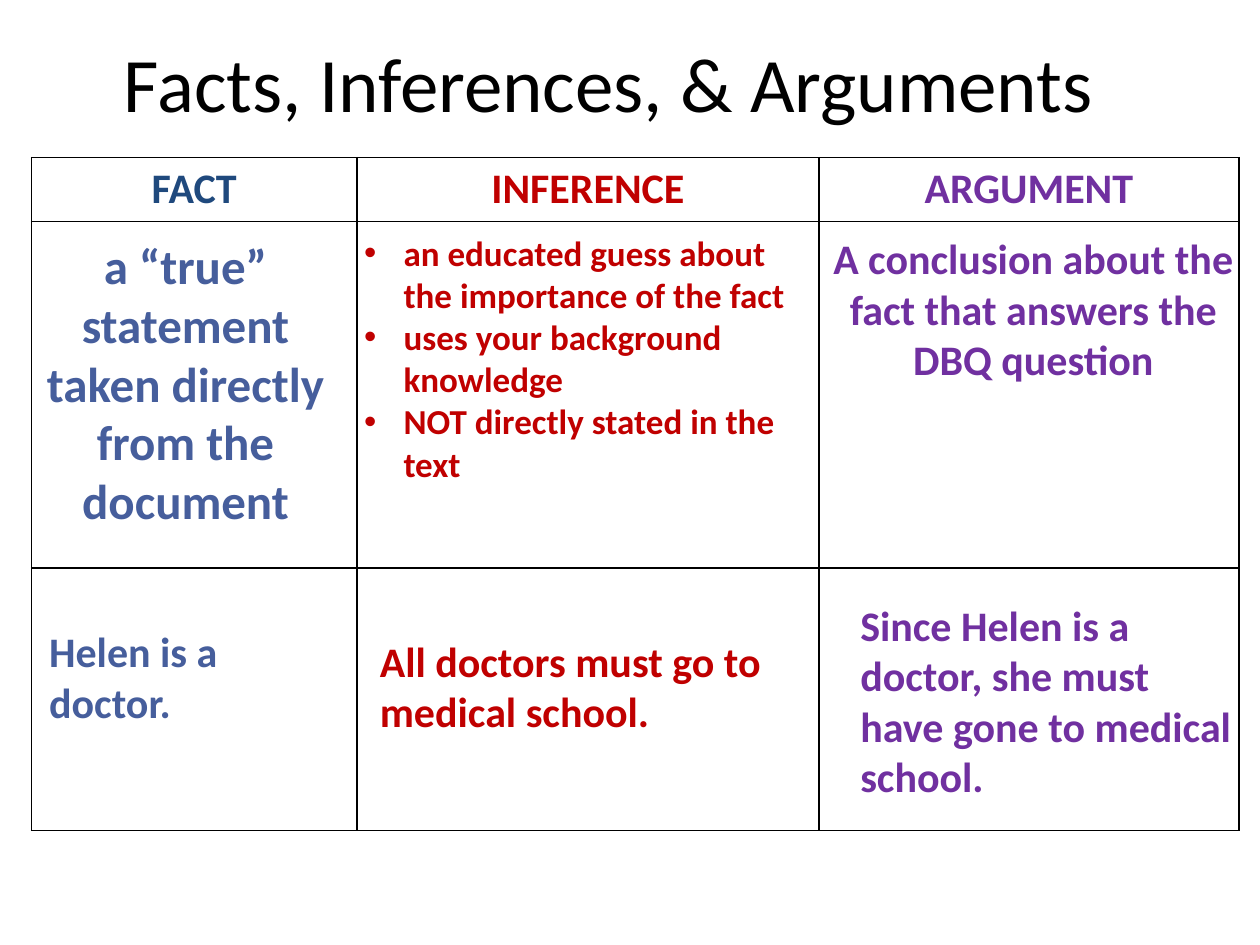
from pptx import Presentation
from pptx import util as u
from pptx.dml.color import RGBColor
from pptx.enum import text
from pptx.oxml import parse_xml
from pptx.oxml.ns import nsdecls

COLOURS = {"black": "000000", "navy": "1F497D", "blue": "465E9C",
           "red": "C00000", "purple": "7030A0"}
FONT = "Calibri"
CENTRE, LEFT = text.PP_ALIGN.CENTER, text.PP_ALIGN.LEFT
BULLET_INDENT = 22.5

HEADERS = [("FACT", "navy"), ("INFERENCE", "red"), ("ARGUMENT", "purple")]
COLUMN_WIDTHS = [186, 264, 240]
ROW_HEIGHTS = [36, 198, 150]
TABLE_LEFT, TABLE_TOP = 18, 90

TITLE = ("Facts, Inferences, & Arguments", (24, 1.5, 648, 90))
DEFINITIONS = [
    (["a “true” statement taken directly from the document"],
     (12, 131, 188, 177), 28, "blue", CENTRE),
    (["an educated guess about the importance of the fact",
      "uses your background knowledge",
      "NOT directly stated in the text"],
     (201, 129, 267, 153), 20, "red", LEFT),
    (["A conclusion about the fact that answers the DBQ question"],
     (468, 129.5, 245, 94), 24, "purple", CENTRE),
]
EXAMPLES = [
    (["Helen is a doctor."], (21, 354, 180, 65.5), 24, "blue", LEFT),
    (["All doctors must go to medical school."],
     (210, 359.5, 274, 65.5), 24, "red", LEFT),
    (["Since Helen is a doctor, she must have gone to medical school."],
     (484.5, 339, 228.5, 124), 24, "purple", LEFT),
]


def write(para, words, size, colour, align, bold=True):
    para.alignment = align
    span = para.add_run()
    span.text = words
    font_format = {"name": FONT, "size": u.Pt(size), "bold": bold}
    for name, value in font_format.items():
        setattr(span.font, name, value)
    span.font.color.rgb = RGBColor.from_string(COLOURS[colour])


def add_bullet(para):
    properties = para._p.get_or_add_pPr()
    properties.set("marL", str(u.Pt(BULLET_INDENT)))
    properties.set("indent", str(-u.Pt(BULLET_INDENT)))
    properties.append(parse_xml(f'<a:buFont {nsdecls("a")} typeface="Arial"/>'))
    properties.append(parse_xml(f'<a:buChar {nsdecls("a")} char="•"/>'))


def add_text(page, lines, place, size, colour, align, bold=True,
             anchor=text.MSO_ANCHOR.TOP):
    box = page.shapes.add_textbox(*map(u.Pt, place))
    frame = box.text_frame
    for name, value in {"word_wrap": True, "vertical_anchor": anchor}.items():
        setattr(frame, name, value)
    for index, words in enumerate(lines):
        para = frame.add_paragraph() if index else frame.paragraphs[0]
        write(para, words, size, colour, align, bold)
        if len(lines) > 1:
            add_bullet(para)


def add_borders(cell):
    properties = cell._tc.get_or_add_tcPr()
    for index, side in enumerate(("lnL", "lnR", "lnT", "lnB")):
        properties.insert(index, parse_xml(
            f'<a:{side} {nsdecls("a")} w="{u.Pt(1)}"><a:solidFill>'
            f'<a:srgbClr val="{COLOURS["black"]}"/></a:solidFill></a:{side}>'))


def add_grid(page):
    place = (TABLE_LEFT, TABLE_TOP, sum(COLUMN_WIDTHS), sum(ROW_HEIGHTS))
    table = page.shapes.add_table(
        len(ROW_HEIGHTS), len(COLUMN_WIDTHS), *map(u.Pt, place)).table
    for name in ("first_row", "horz_banding"):
        setattr(table, name, False)
    for column, width in zip(table.columns, COLUMN_WIDTHS):
        column.width = u.Pt(width)
    for row, height in zip(table.rows, ROW_HEIGHTS):
        row.height = u.Pt(height)
    for cell in table.iter_cells():
        cell.fill.background()
        add_borders(cell)
    for cell, (words, colour) in zip(table.rows[0].cells, HEADERS):
        write(cell.text_frame.paragraphs[0], words, 24, colour, CENTRE)


def main():
    deck = Presentation()
    deck.slide_width, deck.slide_height = u.Pt(720), u.Pt(540)
    page = deck.slides.add_slide(deck.slide_layouts[6])
    add_grid(page)
    words, place = TITLE
    add_text(page, [words], place, 44, "black", CENTRE, bold=False,
             anchor=text.MSO_ANCHOR.MIDDLE)
    for entry in DEFINITIONS + EXAMPLES:
        add_text(page, *entry)
    deck.save("out.pptx")


if __name__ == "__main__":
    main()
